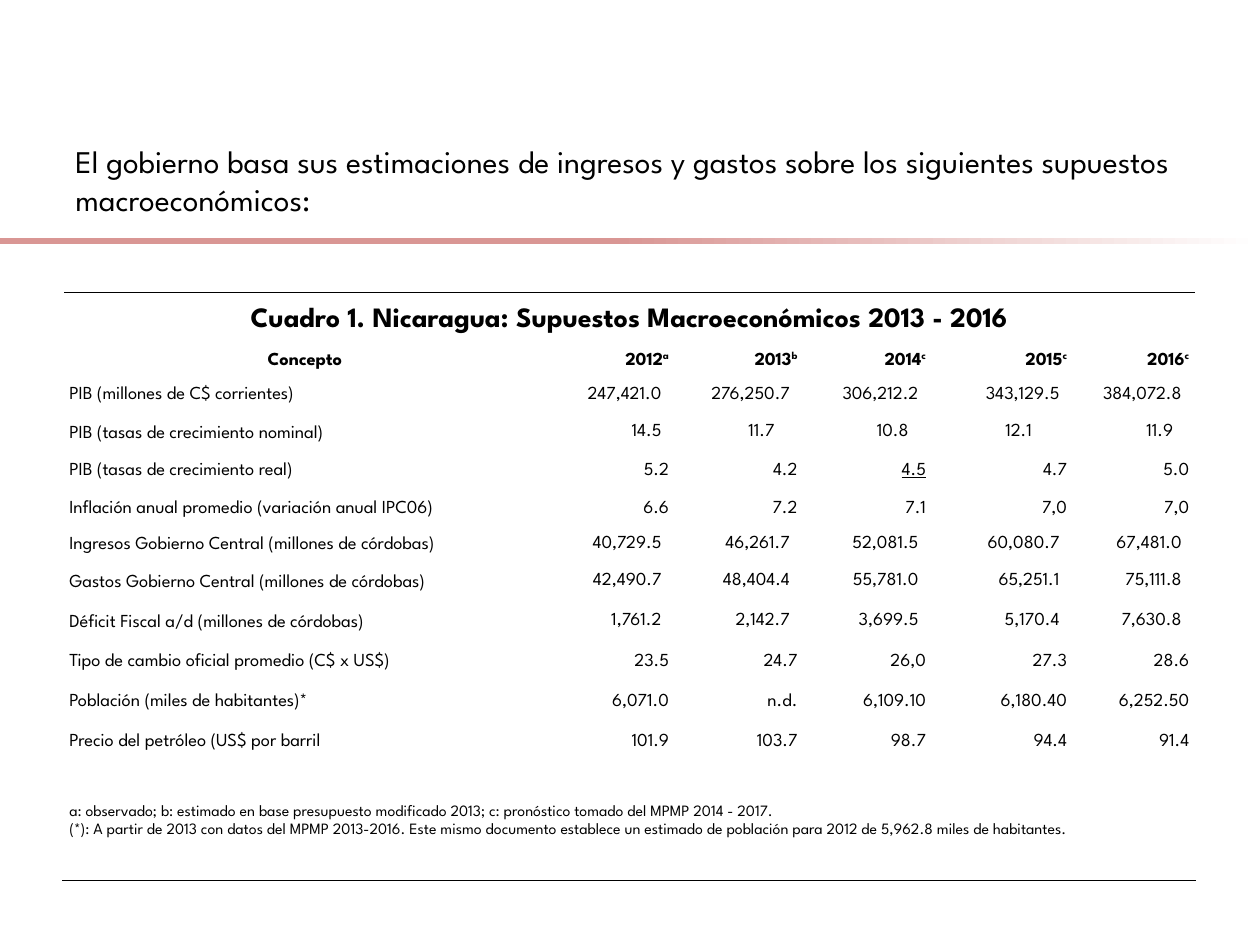
from lxml import etree
from pptx import Presentation
from pptx.dml.color import RGBColor
from pptx.enum import shapes, text
from pptx.oxml.ns import qn
from pptx.util import Inches, Pt

FONT = "League Spartan"
COLORS = {"text": "000000", "bar": "D99694", "fade": "FFFFFF"}
LEFT, CENTER, RIGHT = text.PP_ALIGN.LEFT, text.PP_ALIGN.CENTER, text.PP_ALIGN.RIGHT


def style(p, size, align=LEFT, bold=False, spacing=1.2):
    p.font.name, p.font.size, p.font.bold = FONT, Pt(size), bold
    p.font.color.rgb = RGBColor.from_string(COLORS["text"])
    p.alignment, p.line_spacing = align, spacing


def add_border(cell, side):
    """Draw a 1 pt line on one side of a cell: lnT or lnB."""
    ln = etree.Element(qn("a:" + side), w=str(Pt(1)))
    fill = etree.SubElement(ln, qn("a:solidFill"))
    etree.SubElement(fill, qn("a:srgbClr"), val=COLORS["text"])
    cell._tc.get_or_add_tcPr().insert(0, ln)


prs = Presentation()
prs.slide_width, prs.slide_height = Inches(10), Inches(7.5)
s = prs.slides.add_slide(prs.slide_layouts[6])

# Heading
tf = s.shapes.add_textbox(Inches(0.5), Inches(0.69), Inches(9), Inches(1.25)).text_frame
tf.word_wrap = True
tf.vertical_anchor = text.MSO_ANCHOR.BOTTOM
tf.margin_bottom = Inches(0.21)
tf.text = ("El gobierno basa sus estimaciones de ingresos y gastos "
           "sobre los siguientes supuestos macroeconómicos:")
style(tf.paragraphs[0], 18, spacing=1.0)

# Table contents
title = "Cuadro 1. Nicaragua: Supuestos Macroeconómicos 2013 - 2016"
years = [("2012", "a"), ("2013", "b"), ("2014", "c"), ("2015", "c"), ("2016", "c")]
NOMINAL = "PIB (tasas de crecimiento nominal)"
REAL = "PIB (tasas de crecimiento real)"
rows = [
    ("PIB (millones de C$ corrientes)", "247,421.0", "276,250.7", "306,212.2", "343,129.5", "384,072.8"),
    (NOMINAL, "14.5", "11.7", "10.8", "12.1", "11.9"),
    (REAL, "5.2", "4.2", "4.5", "4.7", "5.0"),
    ("Inflación anual promedio (variación anual IPC06)", "6.6", "7.2", "7.1", "7,0", "7,0"),
    ("Ingresos Gobierno Central (millones de córdobas)",
     "40,729.5", "46,261.7", "52,081.5", "60,080.7", "67,481.0"),
    ("Gastos Gobierno Central (millones de córdobas)",
     "42,490.7", "48,404.4", "55,781.0", "65,251.1", "75,111.8"),
    ("Déficit Fiscal a/d (millones de córdobas)", "1,761.2", "2,142.7", "3,699.5", "5,170.4", "7,630.8"),
    ("Tipo de cambio oficial promedio (C$ x US$)", "23.5", "24.7", "26,0", "27.3", "28.6"),
    ("Población (miles de habitantes)*", "6,071.0", "n.d.", "6,109.10", "6,180.40", "6,252.50"),
    ("Precio del petróleo (US$ por barril", "101.9", "103.7", "98.7", "94.4", "91.4"),
]
notes = [
    "a: observado; b: estimado en base presupuesto modificado 2013; "
    "c: pronóstico tomado del MPMP 2014 - 2017.",
    "(*): A partir de 2013 con datos del MPMP 2013-2016. Este mismo documento establece "
    "un estimado de población para 2012 de 5,962.8 miles de habitantes.",
]
widths = [3.84, 1.02, 1.02, 1.02, 1.12, 0.97]
heights = [0.41, 0.24, 0.31, 0.3, 0.3, 0.29, 0.29, 0.31, 0.32, 0.31, 0.32, 0.31, 0.96]

table = s.shapes.add_table(len(heights), len(widths), Inches(0.5), Inches(2.32),
                           Inches(sum(widths)), Inches(sum(heights))).table
table.first_row = table.horz_banding = False
for col, width in zip(table.columns, widths):
    col.width = Inches(width)
for row, height in zip(table.rows, heights):
    row.height = Inches(height)
for cell in table.iter_cells():
    cell.fill.background()
    cell.vertical_anchor = text.MSO_ANCHOR.MIDDLE
    cell.margin_left = cell.margin_right = Inches(0.05)
    cell.margin_top = cell.margin_bottom = 0
    style(cell.text_frame.paragraphs[0], 10.5)

# Title and notes span the whole width
last = len(heights) - 1
for i, side in ((0, "lnT"), (last, "lnB")):
    for j in range(len(widths)):
        add_border(table.cell(i, j), side)
    table.cell(i, 0).merge(table.cell(i, len(widths) - 1))
table.cell(0, 0).text = title
style(table.cell(0, 0).text_frame.paragraphs[0], 16, CENTER, True)
tf = table.cell(last, 0).text_frame
tf.text = "\n".join(notes)
for p in tf.paragraphs:
    style(p, 9)

# Column headings
table.cell(1, 0).text = "Concepto"
style(table.cell(1, 0).text_frame.paragraphs[0], 10.5, CENTER, True)
for j, (year, note) in enumerate(years, 1):
    p = table.cell(1, j).text_frame.paragraphs[0]
    style(p, 10.5, RIGHT, True)
    p.add_run().text = year
    r = p.add_run()
    r.text = note
    r.font._element.set("baseline", "30000")

# Data; amounts in money sit further from the right edge
for i, (concept, *values) in enumerate(rows, 2):
    table.cell(i, 0).text = concept
    style(table.cell(i, 0).text_frame.paragraphs[0], 10.5)
    for j, value in enumerate(values, 1):
        cell = table.cell(i, j)
        cell.text = value
        p = cell.text_frame.paragraphs[0]
        style(p, 10.5, RIGHT)
        if concept == NOMINAL and j > 1:
            p.alignment = LEFT
            cell.margin_left = Inches(0.58)
        elif concept == NOMINAL or "millones" in concept:
            cell.margin_right = Inches(0.11)
        if concept == NOMINAL or "córdobas" in concept:
            p.line_spacing = 1.0
        if concept == REAL and years[j - 1][0] == "2014":
            p.runs[0].font.underline = True

# Bar under the heading, fading out to the right
bar = s.shapes.add_shape(shapes.MSO_SHAPE.RECTANGLE, 0, Inches(1.89), Inches(10), Inches(0.05))
bar.shadow.inherit = False
bar.line.fill.background()
bar.fill.gradient()
bar.fill.gradient_angle = 0
for stop, position, name in zip(bar.fill.gradient_stops, (0.49, 1), ("bar", "fade")):
    stop.position = position
    stop.color.rgb = RGBColor.from_string(COLORS[name])

prs.save("out.pptx")
